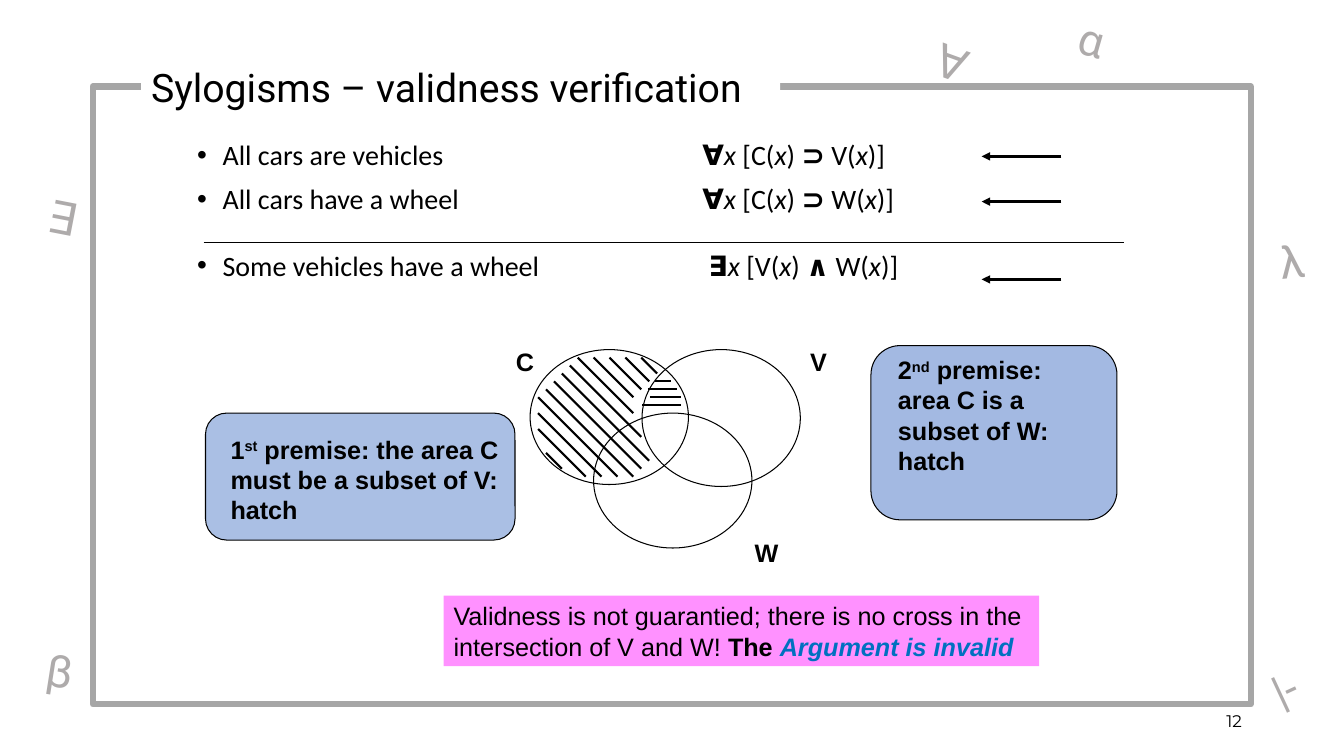
from lxml import etree
from pptx import Presentation
from pptx.dml.color import RGBColor
from pptx.enum.shapes import MSO_CONNECTOR, MSO_SHAPE
from pptx.enum.text import MSO_ANCHOR, PP_ALIGN
from pptx.oxml.ns import qn
from pptx.util import Cm, Pt

BLACK = RGBColor(0x00, 0x00, 0x00)
WHITE = RGBColor(0xFF, 0xFF, 0xFF)
FRAME_GREY = RGBColor(0xA6, 0xA6, 0xA6)
GLYPH_GREY = RGBColor(0xAE, 0xAB, 0xAB)
BLUE = RGBColor(0x44, 0x72, 0xC4)
MAGENTA = RGBColor(0xFF, 0x00, 0xFF)
ACCENT = RGBColor(0x00, 0x70, 0xC0)
RECT, ELLIPSE = MSO_SHAPE.RECTANGLE, MSO_SHAPE.OVAL
ROUNDED = MSO_SHAPE.FLOWCHART_ALTERNATE_PROCESS
STRAIGHT = MSO_CONNECTOR.STRAIGHT
MIDDLE, RIGHT = MSO_ANCHOR.MIDDLE, PP_ALIGN.RIGHT

prs = Presentation()
prs.slide_width, prs.slide_height = Cm(33.87), Cm(19.05)
s = prs.slides.add_slide(prs.slide_layouts[6])


def add_box(kind, box, fill=None, alpha=100, line=None, width=0.75):
    """Add a preset shape, or a text box when kind is None."""
    box = [Cm(v) for v in box]
    if kind is None:
        sp = s.shapes.add_textbox(*box)
    else:
        sp = s.shapes.add_shape(kind, *box)
        sp.shadow.inherit = False
        if fill is None:
            sp.fill.background()
        else:
            sp.fill.solid()
            sp.fill.fore_color.rgb = fill
            if alpha < 100:
                color = sp.fill._xPr.find(".//" + qn("a:srgbClr"))
                etree.SubElement(color, qn("a:alpha"), val=str(alpha * 1000))
        if line is None:
            sp.line.fill.background()
        else:
            sp.line.color.rgb = line
            sp.line.width = Pt(width)
    sp.text_frame.word_wrap = True
    sp.text_frame.vertical_anchor = MSO_ANCHOR.TOP
    return sp


def add_text(p, runs, size, font="Arial", color=BLACK, bold=None):
    """Fill a paragraph with (text, style) runs; styles: b bold, i italic, ^ raised."""
    p.alignment = PP_ALIGN.LEFT
    p.font.size, p.font.name, p.font.color.rgb = Pt(size), font, color
    p.font.bold = bold
    for text, style in runs:
        r = p.add_run()
        r.text = text
        if "b" in style:
            r.font.bold = True
        if "i" in style:
            r.font.italic = True
        if "^" in style:
            r.font._element.set("baseline", "30000")


# Premises and conclusion with their formulas
rows = [
    ("All cars are vehicles\t", "∀", "C", "⊃ ", "V", 10),
    ("All cars have a wheel\t", "∀", "C", "⊃ ", "W", 10),
    ("Some vehicles have a wheel\t ", "∃", "V", "∧ ", "W", 26),
]
tf = add_box(None, (4.72, 3.43, 24.41, 4.39)).text_frame
for i, (sentence, quantifier, left, operator, right, space) in enumerate(rows):
    p = tf.paragraphs[0] if i == 0 else tf.add_paragraph()
    add_text(p, [(sentence, ""), (quantifier, "b"), ("x ", "i"), (f"[{left}(", ""),
                 ("x", "i"), (") ", ""), (operator, "b"), (f"{right}(", ""),
                 ("x", "i"), (")]", "")], 20, "Calibri")
    p.line_spacing = 0.9
    p.space_before = Pt(space)
    pPr = p._p.get_or_add_pPr()
    pPr.set("marL", str(Cm(0.64)))
    pPr.set("indent", str(-Cm(0.64)))
    defaults = pPr.find(qn("a:defRPr"))
    bullet_font = etree.Element(qn("a:buFont"), typeface="Arial")
    bullet = etree.Element(qn("a:buChar"), char="•")
    tabs = etree.Element(qn("a:tabLst"))
    etree.SubElement(tabs, qn("a:tab"), pos=str(Cm(12.73)), algn="l")
    for item in (bullet_font, bullet, tabs):
        defaults.addprevious(item)

# Slide number
sp = add_box(None, (23.93, 17.65, 7.62, 1.02))
sp.text_frame.vertical_anchor = MIDDLE
p = sp.text_frame.paragraphs[0]
add_text(p, [("12", "")], 12, "Montserrat")
p.alignment = RIGHT

# Venn diagram circles and their labels
circles = [
    ("C", (13.36, 8.81, 3.99, 3.4), (12.75, 8.61)),
    ("V", (16.18, 8.81, 3.99, 3.45), (20.17, 8.61)),
    ("W", (14.96, 10.41, 3.99, 3.4), (18.77, 13.41)),
]
for name, box, corner in circles:
    add_box(ELLIPSE, box, line=BLACK)
    label = add_box(None, (*corner, 1.19, 1.02))
    add_text(label.text_frame.paragraphs[0], [(name, "")], 18, bold=True)

# Premise notes
notes = [
    ((5.18, 10.41, 7.8, 3.2), 45, (5.56, 10.82, 7.59, 2.54),
     "1", "st", " premise: the area C must be a subset of V: hatch"),
    ((21.95, 8.71, 6.2, 4.39), 49, (22.38, 8.81, 5.21, 3.3),
     "2", "nd", " premise: area C is a subset of W: hatch"),
]
for box, alpha, text_box, number, suffix, text in notes:
    add_box(ROUNDED, box, BLUE, alpha, BLACK)
    p = add_box(None, text_box).text_frame.paragraphs[0]
    add_text(p, [(number, ""), (suffix, "^"), (text, "")], 18, bold=True)

# Verdict
p = add_box(RECT, (11.18, 15.01, 15.01, 1.78), MAGENTA, 43).text_frame.paragraphs[0]
add_text(p, [("Validness is not guarantied; there is no cross in the "
              "intersection of V and W! ", ""),
             ("The ", "b"), ("Argument is invalid", "bi")], 18)
p.runs[-1].font.color.rgb = ACCENT

# Lines: (x1, y1, x2, y2, width, arrowhead)
lines = [(5.13, 6.1, 28.32, 6.1, 0.75, False)]
lines += [(26.75, y, 24.74, y, 2, True) for y in (3.94, 5.08, 7.04)]

# First hatch: 45° strokes on a grid, as (column, row, length) in cells
CELL = 0.2
HATCH_X, HATCH_Y = 13.56, 9.01
strokes = [(13, 0, 2), (11, 0, 3), (9, 0, 4), (7, 0, 5), (5, 0, 7), (4, 1, 9),
           (3, 2, 11), (2, 3, 11), (1, 4, 11), (0, 5, 10), (0, 7, 8), (0, 9, 6),
           (1, 12, 2)]
for col, row, length in strokes:
    x, y = HATCH_X + col * CELL, HATCH_Y + row * CELL
    lines.append((x, y, x + length * CELL, y + length * CELL, 1.5, False))

# Second hatch: level strokes
spans = [(16.51, 16.92), (16.33, 17.07), (16.38, 17.17), (16.18, 17.17)]
for i, (x1, x2) in enumerate(spans):
    y = 9.6 + i * CELL
    lines.append((x1, y, x2, y, 1.5, False))

for x1, y1, x2, y2, width, arrow in lines:
    c = s.shapes.add_connector(STRAIGHT, Cm(x1), Cm(y1), Cm(x2), Cm(y2))
    c.line.color.rgb = BLACK
    c.line.width = Pt(width)
    if arrow:
        etree.SubElement(c.line._get_or_add_ln(), qn("a:tailEnd"), type="triangle")
    etree.SubElement(c._element.spPr, qn("a:effectLst"))

# Frame and title
add_box(RECT, (2.34, 2.18, 29.18, 15.57), line=FRAME_GREY, width=4.5)
sp = add_box(RECT, (3.56, 1.45, 16.1, 1.47), WHITE)
sp.text_frame.vertical_anchor = MIDDLE
add_text(sp.text_frame.paragraphs[0],
         [("Sylogisms – validness verification", "")], 28, "Roboto")

# Decorative symbols around the frame: (symbol, left, top, width, rotation)
symbols = [
    ("∀", 23.34, 0.79, 1.52, 20),
    ("∃", 0.97, 4.7, 1.6, 11),
    ("α", 26.95, 0.25, 1.6, 16),
    ("β", 0.94, 16.1, 1.47, 9),
    ("λ", 32, 5.74, 1.5, 354),
    ("|-", 31.8, 16.41, 1.73, 335),
]
for symbol, left, top, width, rotation in symbols:
    sp = add_box(None, (left, top, width, 1.63))
    sp.rotation = rotation
    add_text(sp.text_frame.paragraphs[0], [(symbol, "")], 32, "Roboto", GLYPH_GREY)

prs.save("out.pptx")
